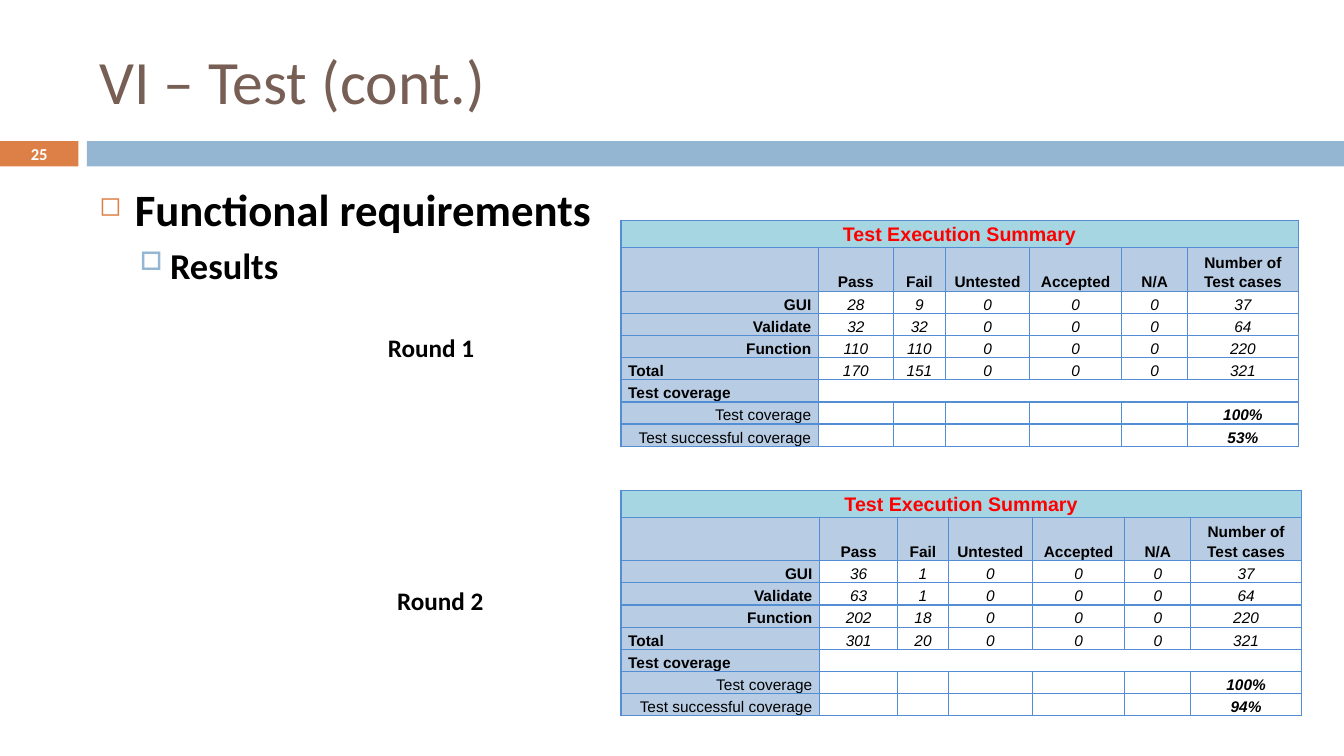
from lxml import etree
from pptx import Presentation
from pptx.dml.color import RGBColor
from pptx.enum.shapes import MSO_SHAPE
from pptx.enum.text import MSO_ANCHOR, PP_ALIGN
from pptx.oxml.ns import qn
from pptx.util import Pt


def color(hex_string):
    return RGBColor.from_string(hex_string)


def write(paragraph, text, size, hex_string, **formats):
    run = paragraph.add_run()
    run.text = text
    run.font.color.rgb = color(hex_string)
    values = {"name": "Calibri", "size": Pt(size), "bold": True, "italic": False} | formats
    for name, value in values.items():
        setattr(run.font, name, value)


presentation = Presentation()
presentation.slide_width = Pt(960)
presentation.slide_height = Pt(540)
slide = presentation.slides.add_slide(presentation.slide_layouts[6])

for left, width, fill in [(0, 56, "DD8047"), (62, 898, "94B6D2")]:
    shape = slide.shapes.add_shape(MSO_SHAPE.RECTANGLE, Pt(left), Pt(100.8), Pt(width), Pt(18))
    shape.shadow.inherit = False
    shape.fill.solid()
    shape.fill.fore_color.rgb = color(fill)
    shape.line.fill.background()

text_boxes = [
    ("VI – Test (cont.)", 64, 18, 856, 78, 44, "775F55", False, True, MSO_ANCHOR.MIDDLE, PP_ALIGN.LEFT),
    ("25", 0, 100.4, 56, 19, 11.9, "FFFFFF", True, True, MSO_ANCHOR.MIDDLE, PP_ALIGN.CENTER),
    ("Round 1", 270, 234, 77, 29, 18, "000000", True, False, MSO_ANCHOR.TOP, PP_ALIGN.LEFT),
    ("Round 2", 276.6, 414.8, 77, 29, 18, "000000", True, False, MSO_ANCHOR.TOP, PP_ALIGN.LEFT),
]
for text, left, top, width, height, size, ink, bold, wrap, anchor, alignment in text_boxes:
    frame = slide.shapes.add_textbox(Pt(left), Pt(top), Pt(width), Pt(height)).text_frame
    frame.word_wrap = wrap
    frame.vertical_anchor = anchor
    frame.paragraphs[0].alignment = alignment
    write(frame.paragraphs[0], text, size, ink, bold=bold)

body = slide.shapes.add_textbox(Pt(64), Pt(126), Pt(856), Pt(354)).text_frame
body.word_wrap = True
outline = [
    ("Functional requirements", 32, 7, 25.2, 25.2, "◻", "DD8047", 60),
    ("Results", 26, 5.5, 50.4, 21.6, "□", "94B6D2", 70),
]
for level, (text, size, space, margin, hanging, bullet, bullet_color, percent) in enumerate(outline):
    paragraph = body.add_paragraph() if level else body.paragraphs[0]
    paragraph.level = level
    paragraph.space_before = Pt(space)
    write(paragraph, text, size, "000000")
    properties = paragraph._p.get_or_add_pPr()
    properties.set("marL", str(Pt(margin)))
    properties.set("indent", str(-Pt(hanging)))
    bullet_ink = etree.SubElement(properties, qn("a:buClr"))
    etree.SubElement(bullet_ink, qn("a:srgbClr"), val=bullet_color)
    etree.SubElement(properties, qn("a:buSzPct"), val=str(percent * 1000))
    etree.SubElement(properties, qn("a:buChar"), char=bullet)

header = ["", "Pass", "Fail", "Untested", "Accepted", "N/A", "Number of Test cases"]
labels = ["GUI", "Validate", "Function", "Total"]
case_counts = [37, 64, 220, 321]
COVERAGE_ROW = 6
rounds = [
    (157.7, [141.2, 53.3, 37.5, 59.9, 66, 47, 79],
     [(28, 9), (32, 32), (110, 110), (170, 151)], "53%"),
    (350.2, [142, 55.7, 36.3, 60, 66, 47.2, 79],
     [(36, 1), (63, 1), (202, 18), (301, 20)], "94%"),
]
row_heights = [18.7, 31] + [15.84] * 7

for top, column_widths, results, success in rounds:
    rows = [["Test Execution Summary"] + [""] * 6, header]
    for label, (passed, failed), count in zip(labels, results, case_counts):
        rows.append([label, passed, failed, 0, 0, 0, count])
    rows.append(["Test coverage"] + [""] * 6)
    rows.append(["Test coverage"] + [""] * 5 + ["100%"])
    rows.append(["Test successful coverage"] + [""] * 5 + [success])

    table = slide.shapes.add_table(9, 7, Pt(443.5), Pt(top), Pt(sum(column_widths)),
                                   Pt(sum(row_heights))).table
    table.first_row = False
    table.horz_banding = False
    for column, width in zip(table.columns, column_widths):
        column.width = Pt(width)
    for row, height in zip(table.rows, row_heights):
        row.height = Pt(height)
    table.cell(0, 0).merge(table.cell(0, 6))

    for row_index, values in enumerate(rows):
        for column_index, value in enumerate(values):
            cell = table.cell(row_index, column_index)
            is_title = row_index == 0
            is_label = column_index == 0
            cell.margin_left = cell.margin_right = Pt(5.2)
            cell.margin_top = cell.margin_bottom = 0
            cell.vertical_anchor = MSO_ANCHOR.TOP if is_title else MSO_ANCHOR.BOTTOM

            open_sides = set()
            if row_index == COVERAGE_ROW:
                if column_index > 1:
                    open_sides.add("lnL")
                if 0 < column_index < 6:
                    open_sides.add("lnR")
            cell_properties = cell._tc.get_or_add_tcPr()
            for side in ["lnL", "lnR", "lnT", "lnB"]:
                border = etree.SubElement(cell_properties, qn(f"a:{side}"), w=str(Pt(1)))
                if side in open_sides:
                    etree.SubElement(border, qn("a:noFill"))
                else:
                    border_fill = etree.SubElement(border, qn("a:solidFill"))
                    etree.SubElement(border_fill, qn("a:srgbClr"),
                                     val="548DD4" if is_title else "538ED5")

            cell.fill.solid()
            shaded = "B8CCE4" if is_label or row_index == 1 else "FFFFFF"
            cell.fill.fore_color.rgb = color("A7D6E3" if is_title else shaded)

            paragraph = cell.text_frame.paragraphs[0]
            paragraph.line_spacing = 1.15
            paragraph.alignment = PP_ALIGN.CENTER
            if is_label and row_index > 1:
                paragraph.alignment = PP_ALIGN.LEFT if row_index in (5, 6) else PP_ALIGN.RIGHT
            if value == "":
                etree.SubElement(paragraph._p, qn("a:endParaRPr"), sz="1100")
                continue
            is_result = row_index > 1 and not is_label
            bold = row_index > COVERAGE_ROW if is_result else row_index <= COVERAGE_ROW
            write(paragraph, str(value), 14 if is_title else 11,
                  "FF0000" if is_title else "000000", name="Arial", bold=bold, italic=is_result)

presentation.save("out.pptx")
